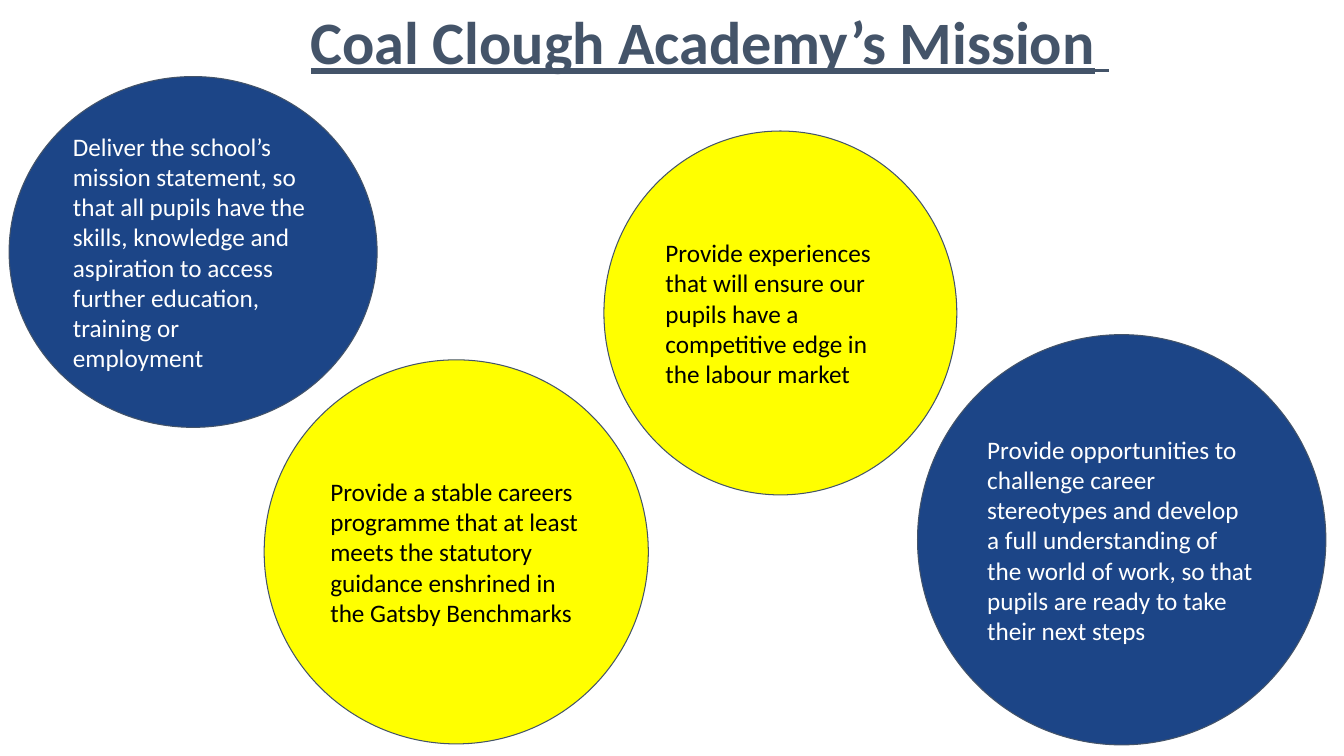
from pptx import Presentation
from pptx.dml.color import RGBColor
from pptx.enum.shapes import MSO_SHAPE
from pptx.enum.text import MSO_ANCHOR, MSO_AUTO_SIZE, PP_ALIGN
from pptx.util import Inches, Pt

COLOURS = {
    "slate": "445469",
    "navy": "1C4587",
    "yellow": "FFFF00",
    "white": "FFFFFF",
    "black": "000000",
}

TITLE_RUNS = [("Coal Clough Academy’s Mission", "Calibri"), (" ", "Roboto Condensed")]

MISSION_CIRCLES = [
    ((0.09, 0.76, 3.65, 3.48), "navy", "white",
     "Deliver the school’s mission statement, so that all pupils have the skills, "
     "knowledge and aspiration to access further education, training or employment"),
    ((2.62, 3.57, 3.81, 3.81), "yellow", "black",
     "Provide a stable careers programme that at least meets the statutory guidance "
     "enshrined in the Gatsby Benchmarks"),
    ((5.99, 1.3, 3.5, 3.61), "yellow", "black",
     "Provide experiences that will ensure our pupils have a competitive edge in the "
     "labour market"),
    ((9.1, 3.32, 4.05, 4.07), "navy", "white",
     "Provide opportunities to challenge career stereotypes and develop a full "
     "understanding of the world of work, so that pupils are ready to take their next steps"),
]


def colour(name):
    return RGBColor.from_string(COLOURS[name])


def set_attributes(target, values):
    for name, value in values.items():
        setattr(target, name, value)


def add_span(para, text, colour_name, font_values):
    span = para.add_run()
    span.text = text
    set_attributes(span.font, font_values)
    span.font.color.rgb = colour(colour_name)


def format_frame(frame, vertical_margin):
    set_attributes(frame, {
        "word_wrap": True,
        "auto_size": MSO_AUTO_SIZE.NONE,
        "vertical_anchor": MSO_ANCHOR.MIDDLE,
        "margin_left": Inches(0.1),
        "margin_right": Inches(0.1),
        "margin_top": Inches(vertical_margin),
        "margin_bottom": Inches(vertical_margin),
    })


def place_title(page, box):
    title = page.shapes.title
    set_attributes(title, dict(zip(("left", "top", "width", "height"), map(Inches, box))))
    format_frame(title.text_frame, 0.05)
    para = title.text_frame.paragraphs[0]
    set_attributes(para, {"alignment": PP_ALIGN.CENTER, "line_spacing": 0.9})
    for text, font_name in TITLE_RUNS:
        add_span(para, text, "slate",
                 {"name": font_name, "size": Pt(43), "bold": True, "underline": True})


def add_mission_circle(page, box, fill_name, text_name, text):
    circle = page.shapes.add_shape(MSO_SHAPE.OVAL, *map(Inches, box))
    circle.shadow.inherit = False
    circle.fill.solid()
    circle.fill.fore_color.rgb = colour(fill_name)
    circle.line.color.rgb = colour("slate")
    circle.line.width = Pt(0.75)
    format_frame(circle.text_frame, 0.1)
    para = circle.text_frame.paragraphs[0]
    para.alignment = PP_ALIGN.LEFT
    add_span(para, text, text_name, {"name": "Calibri", "size": Pt(18)})


def main():
    deck = Presentation()
    set_attributes(deck, {"slide_width": Inches(13.33), "slide_height": Inches(7.5)})
    page = deck.slides.add_slide(deck.slide_layouts.get_by_name("Title Only"))
    place_title(page, (0.83, 0.14, 12.42, 0.62))
    for circle in MISSION_CIRCLES:
        add_mission_circle(page, *circle)
    deck.save("out.pptx")


if __name__ == "__main__":
    main()
